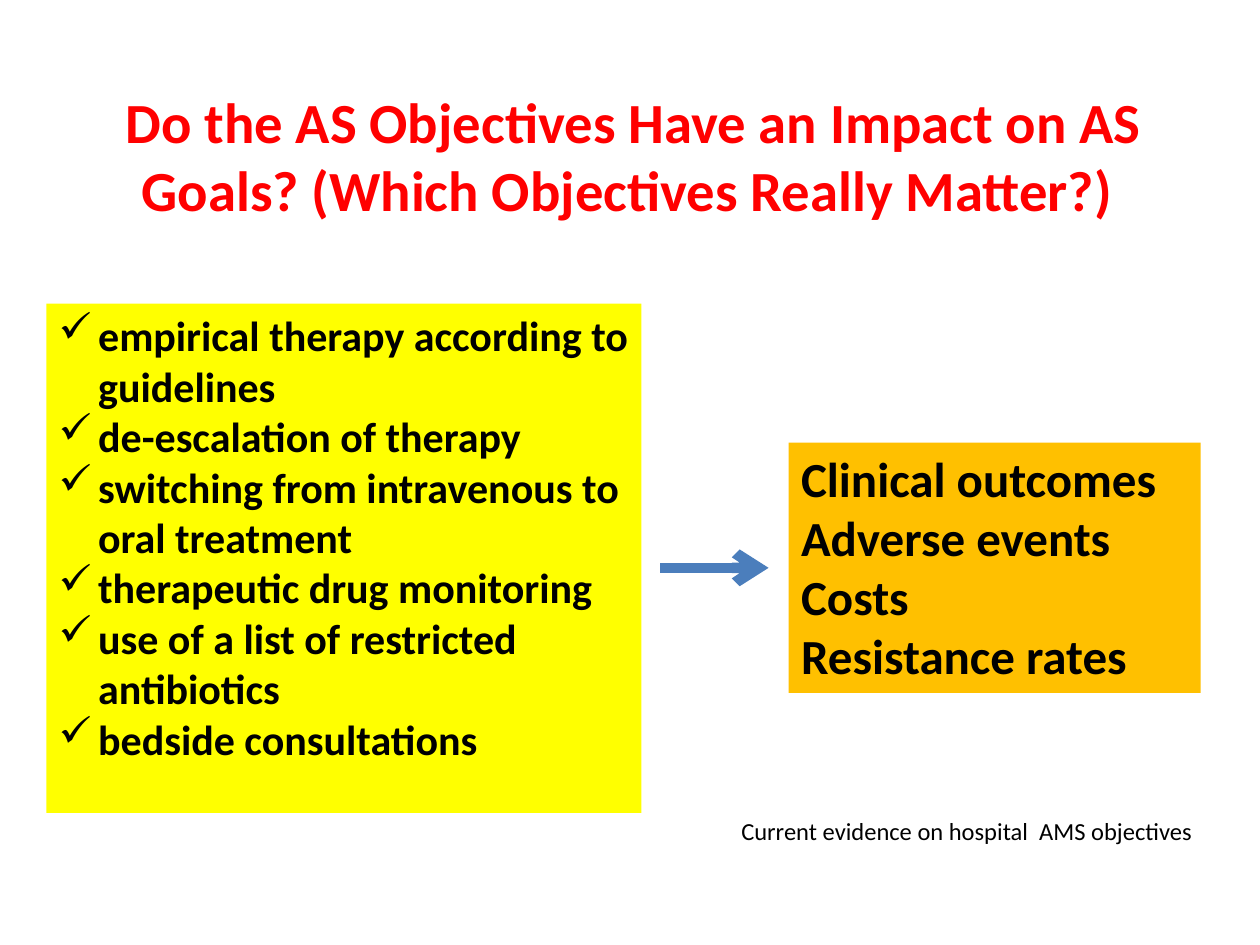
from dataclasses import dataclass

from lxml import etree
from pptx import Presentation
from pptx import util as u
from pptx.dml import color
from pptx.enum import shapes, text
from pptx.oxml import ns

Pt = u.Pt


@dataclass(frozen=True)
class Theme:
    font: str = "Calibri"
    ink: str = "000000"
    head: str = "FF0000"
    goals: str = "FFFF00"
    ends: str = "FFC000"
    line: str = "4B7EBC"
    head_size: float = 32.4
    goal_size: float = 24
    end_size: float = 28
    note_size: float = 14
    indent: float = 22.5


THEME = Theme()

TITLE = ("Do the AS Objectives Have an Impact on AS Goals? "
         "(Which Objectives Really Matter?) ")
GOALS = [
    "empirical therapy according to guidelines",
    "de-escalation of therapy",
    "switching from intravenous to oral treatment",
    "therapeutic drug monitoring",
    "use of a list of restricted antibiotics",
    "bedside consultations",
]
ENDS = ["Clinical outcomes", "Adverse events", "Costs", "Resistance rates"]
NOTE = "Current evidence on hospital  AMS objectives"


def rgb(code):
    return color.RGBColor.from_string(code)


def write(shape, lines, size, ink=THEME.ink, bold=True,
          align=text.PP_ALIGN.LEFT, anchor=text.MSO_ANCHOR.TOP):
    frame = shape.text_frame
    frame.text = "\n".join(lines)
    frame.word_wrap = True
    frame.vertical_anchor = anchor
    for para in frame.paragraphs:
        para.alignment = align
        for run in para.runs:
            font = run.font
            font.name, font.size, font.bold = THEME.font, Pt(size), bold
            font.color.rgb = rgb(ink)


def add_label(slide, box, line, size, **style):
    label = slide.shapes.add_textbox(*map(Pt, box))
    write(label, [line], size, **style)


def add_panel(slide, box, fill, lines, size):
    panel = slide.shapes.add_shape(
        shapes.MSO_SHAPE.RECTANGLE, *map(Pt, box))
    panel.shadow.inherit = False
    panel.fill.solid()
    panel.fill.fore_color.rgb = rgb(fill)
    panel.line.fill.background()
    write(panel, lines, size)
    return panel


def add_ticks(shape):
    """Give each paragraph a check mark with a hanging indent."""
    for para in shape.text_frame.paragraphs:
        props = para._p.get_or_add_pPr()
        props.set("marL", str(Pt(THEME.indent)))
        props.set("indent", str(-Pt(THEME.indent)))
        etree.SubElement(props, ns.qn("a:buChar")).set("char", "✓")


def add_arrow(slide, left, right, y, width):
    arrow = slide.shapes.add_connector(
        shapes.MSO_CONNECTOR.STRAIGHT, Pt(left), Pt(y), Pt(right), Pt(y))
    arrow.line.color.rgb = rgb(THEME.line)
    arrow.line.width = Pt(width)
    etree.SubElement(arrow.line._get_or_add_ln(),
                     ns.qn("a:tailEnd")).set("type", "arrow")
    etree.SubElement(arrow._element.spPr, ns.qn("a:effectLst"))


def main():
    deck = Presentation()
    deck.slide_width, deck.slide_height = Pt(720), Pt(540)
    slide = deck.slides.add_slide(deck.slide_layouts[6])

    add_label(slide, (38, 43.5, 648, 90), TITLE, THEME.head_size,
              ink=THEME.head, align=text.PP_ALIGN.CENTER,
              anchor=text.MSO_ANCHOR.MIDDLE)
    goals = add_panel(slide, (26.5, 173.5, 340, 291), THEME.goals,
                      GOALS, THEME.goal_size)
    add_ticks(goals)
    add_panel(slide, (450.7, 253, 235.4, 143), THEME.ends,
              ENDS, THEME.end_size)
    add_arrow(slide, 377.3, 439.2, 324.5, 6)
    add_label(slide, (416.5, 462.5, 292, 24.5), NOTE, THEME.note_size,
              bold=False)

    deck.save("out.pptx")


if __name__ == "__main__":
    main()
